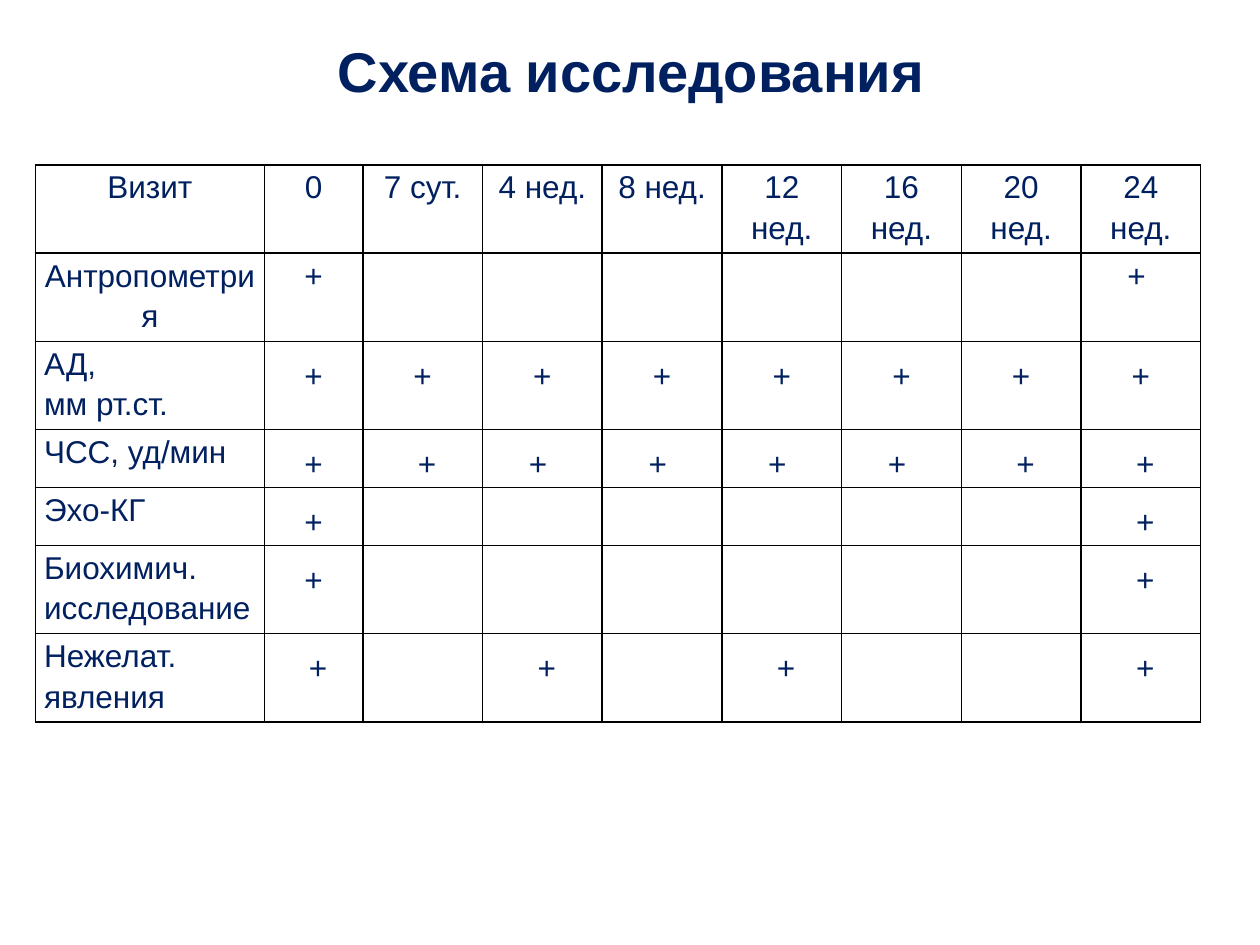
import pptx
import pptx.dml.color
import pptx.enum.text
import pptx.oxml
import pptx.oxml.ns
import pptx.util

Inches = pptx.util.Inches
Pt = pptx.util.Pt
RGBColor = pptx.dml.color.RGBColor
Align = pptx.enum.text.PP_ALIGN
Anchor = pptx.enum.text.MSO_ANCHOR

NAVY = RGBColor(0x00, 0x20, 0x60)
WHITE = RGBColor(0xFF, 0xFF, 0xFF)
BLACK = RGBColor(0x00, 0x00, 0x00)

HARD_SPACE = chr(160)
MARK = "+"
MARK_LEFT = MARK + HARD_SPACE
MARK_RIGHT = HARD_SPACE + MARK

VISITS = ["Визит", "0", "7 сут.", "4 нед.", "8 нед.",
          "12 нед.", "16 нед.", "20 нед.", "24 нед."]
STUDY_ROWS = [
    VISITS,
    ["Антропометрия", MARK] + [""] * 6 + [MARK_LEFT],
    ["АД,\nмм рт.ст."] + [MARK] * 8,
    ["ЧСС, уд/мин", MARK, MARK_RIGHT] + [MARK_LEFT] * 4 + [MARK_RIGHT] * 2,
    ["Эхо-КГ", MARK] + [""] * 6 + [MARK_RIGHT],
    ["Биохимич. исследование", MARK] + [""] * 6 + [MARK_RIGHT],
    ["Нежелат.\nявления", MARK_RIGHT, "", MARK_RIGHT, "", MARK_RIGHT, "", "", MARK_RIGHT],
]
COLUMN_WIDTHS = [1.82, 0.78] + [0.95] * 7
ROW_HEIGHTS = [0.7, 0.7, 0.7, 0.46, 0.46, 0.7, 0.7]
CENTRED_ROWS = 2


class SlideWriter:
    font = "Arial"
    color = NAVY

    def __init__(self, page):
        self.page = page

    def add_span(self, para, text, size, bold=False):
        span = para.add_run()
        span.text = text
        span.font.name = self.font
        span.font.size = Pt(size)
        span.font.bold = bold
        span.font.color.rgb = self.color

    def add_title(self, text, left, top, width, height):
        box = self.page.shapes.add_textbox(
            Inches(left), Inches(top), Inches(width), Inches(height))
        frame = box.text_frame
        frame.word_wrap = True
        frame.vertical_anchor = Anchor.MIDDLE
        para = frame.paragraphs[0]
        para.alignment = Align.CENTER
        self.add_span(para, text, 32, bold=True)

    def add_borders(self, cell):
        properties = cell._tc.get_or_add_tcPr()
        namespace = pptx.oxml.ns.nsdecls("a")
        for index, side in enumerate(("lnL", "lnR", "lnT", "lnB")):
            border = pptx.oxml.parse_xml(
                f'<a:{side} {namespace} w="{Pt(1)}"><a:solidFill>'
                f'<a:srgbClr val="{BLACK}"/></a:solidFill></a:{side}>')
            properties.insert(index, border)

    def fill_cell(self, cell, text, alignment, spacing):
        cell.margin_left = cell.margin_right = Inches(0.07)
        cell.margin_top = cell.margin_bottom = 0
        cell.fill.solid()
        cell.fill.fore_color.rgb = WHITE
        self.add_borders(cell)
        if not text:
            return
        frame = cell.text_frame
        for index, line in enumerate(text.split("\n")):
            para = frame.add_paragraph() if index else frame.paragraphs[0]
            para.alignment = alignment
            para.line_spacing = spacing
            self.add_span(para, line, 18)

    def add_table(self, rows, left, top, widths, heights):
        table = self.page.shapes.add_table(
            len(rows), len(widths), Inches(left), Inches(top),
            Inches(sum(widths)), Inches(sum(heights))).table
        table.first_row = False
        table.horz_banding = False
        for column, width in zip(table.columns, widths):
            column.width = Inches(width)
        for row, height in zip(table.rows, heights):
            row.height = Inches(height)
        for row_index, texts in enumerate(rows):
            centred = row_index < CENTRED_ROWS
            for column_index, text in enumerate(texts):
                is_label = column_index == 0
                alignment = Align.LEFT if is_label and not centred else Align.CENTER
                spacing = 1.15 if is_label or centred else 1.5
                self.fill_cell(table.cell(row_index, column_index), text, alignment, spacing)


def main():
    deck = pptx.Presentation()
    deck.slide_width = Inches(10)
    deck.slide_height = Inches(7.5)
    writer = SlideWriter(deck.slides.add_slide(deck.slide_layouts[6]))
    writer.add_title("Схема исследования", 0.51, 0.21, 9, 0.69)
    writer.add_table(STUDY_ROWS, 0.28, 1.31, COLUMN_WIDTHS, ROW_HEIGHTS)
    deck.save("out.pptx")


if __name__ == "__main__":
    main()
